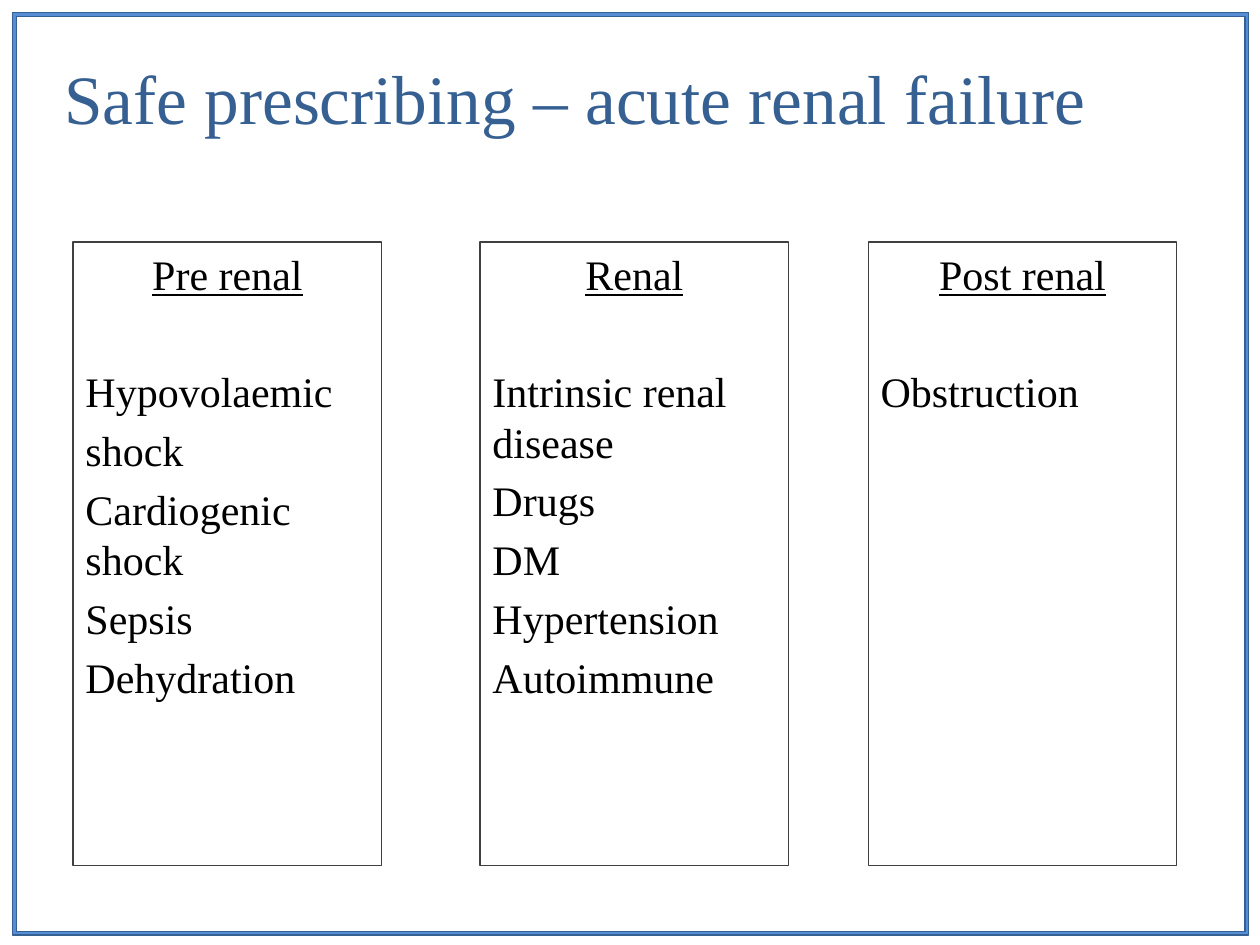
import pptx
import pptx.util
import pptx.dml.color
import pptx.enum.shapes
import pptx.enum.text

COLORS = {"title": "376092", "text": "000000", "outline": "404040",
          "frame": "558ED5", "frame_line": "376092"}
FONT = "Times New Roman"
SLIDE_WIDTH, SLIDE_HEIGHT = 10, 7.5
SHAPES = pptx.enum.shapes.MSO_SHAPE
ALIGN = pptx.enum.text.PP_ALIGN
ANCHOR = pptx.enum.text.MSO_ANCHOR

TITLE = "Safe prescribing – acute renal failure"
# Left edge in inches, heading, causes
CAUSES = [
    (6.89, "Post renal", ["Obstruction"]),
    (3.81, "Renal", ["Intrinsic renal disease", "Drugs", "DM",
                     "Hypertension", "Autoimmune"]),
    (0.58, "Pre renal", ["Hypovolaemic", "shock", "Cardiogenic shock",
                         "Sepsis", "Dehydration"]),
]
COLUMN_TOP, COLUMN_WIDTH, COLUMN_HEIGHT = 1.92, 2.45, 4.95
TEXT_SIZE = 24
ITEM_GAP = 0.2 * TEXT_SIZE
HEADING_GAP = 1.2 * TEXT_SIZE + 2 * ITEM_GAP


def rgb(name):
    return pptx.dml.color.RGBColor.from_string(COLORS[name])


def apply_format(target, values):
    for name, value in values.items():
        setattr(target, name, value)


def place(shape, box):
    names = ("left", "top", "width", "height")
    apply_format(shape, dict(zip(names, map(pptx.util.Inches, box))))


def write(para, text, color, size, **values):
    span = para.add_run()
    span.text = text
    apply_format(span.font, {"name": FONT, "size": pptx.util.Pt(size), **values})
    span.font.color.rgb = rgb(color)


def add_outlined(page, kind, box, line):
    shape = page.shapes.add_shape(kind, *map(pptx.util.Inches, box))
    shape.shadow.inherit = False
    shape.line.color.rgb = rgb(line)
    shape.line.width = pptx.util.Pt(0.75)
    return shape


def add_title(page, box):
    title = page.shapes.title
    place(title, box)
    title.text_frame.vertical_anchor = ANCHOR.MIDDLE
    para = title.text_frame.paragraphs[0]
    para.alignment = ALIGN.LEFT
    write(para, TITLE, "title", 39.6)


def add_column(page, box, heading, items):
    column = add_outlined(page, SHAPES.RECTANGLE, box, "outline")
    column.fill.background()
    frame = column.text_frame
    apply_format(frame, {"word_wrap": True, "vertical_anchor": ANCHOR.TOP})
    para = frame.paragraphs[0]
    para.alignment = ALIGN.CENTER
    write(para, heading, "text", TEXT_SIZE, underline=True)
    for index, item in enumerate(items):
        para = frame.add_paragraph()
        gap = ITEM_GAP if index else HEADING_GAP
        apply_format(para, {"alignment": ALIGN.LEFT,
                            "space_before": pptx.util.Pt(gap)})
        write(para, item, "text", TEXT_SIZE)


def add_border(page, box):
    border = add_outlined(page, SHAPES.FRAME, box, "frame_line")
    border.adjustments[0] = 0.004
    border.fill.solid()
    border.fill.fore_color.rgb = rgb("frame")


def main():
    deck = pptx.Presentation()
    deck.slide_width = pptx.util.Inches(SLIDE_WIDTH)
    deck.slide_height = pptx.util.Inches(SLIDE_HEIGHT)
    page = deck.slides.add_slide(deck.slide_layouts[5])

    # Title
    add_title(page, (0.41, 0.14, 9, 1.25))
    # One column for each type of renal failure
    for left, heading, items in CAUSES:
        add_column(page, (left, COLUMN_TOP, COLUMN_WIDTH, COLUMN_HEIGHT),
                   heading, items)
    # Border around the slide
    add_border(page, (0.1, 0.1, 9.81, 7.32))

    deck.save("out.pptx")


if __name__ == "__main__":
    main()
